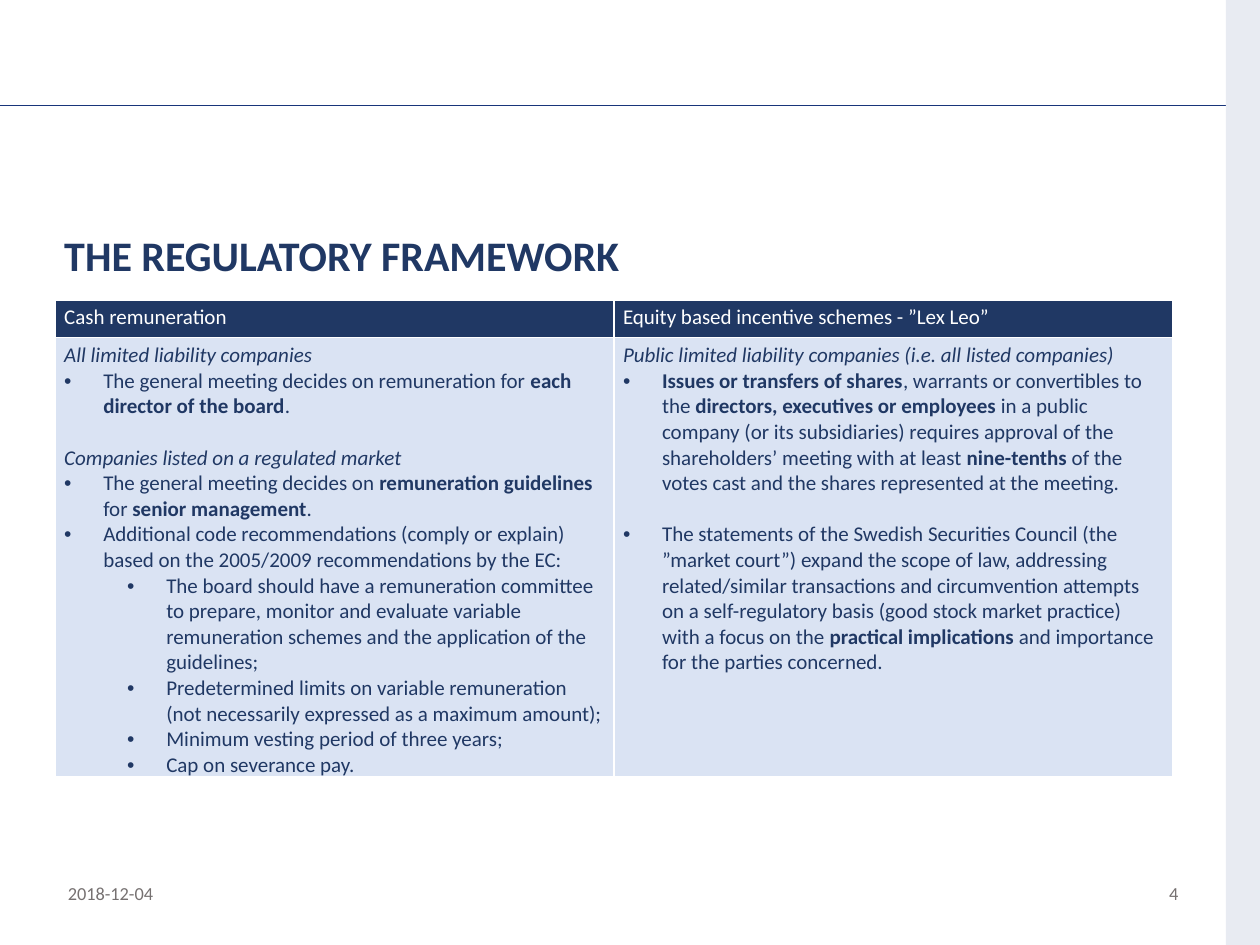
"""Build the slide on the regulatory framework for remuneration."""
from dataclasses import dataclass

from lxml import etree
from pptx import Presentation, util as u
from pptx.dml.color import RGBColor
from pptx.enum import shapes, text
from pptx.oxml import ns

NAVY = RGBColor(0x20, 0x38, 0x64)
RULE_BLUE = RGBColor(0x18, 0x35, 0x7A)
PALE_BLUE = RGBColor(0xDA, 0xE3, 0xF3)
SIDE_BLUE = RGBColor(0xE8, 0xEB, 0xF2)
GREY = RGBColor(0x76, 0x71, 0x71)
WHITE = RGBColor(0xFF, 0xFF, 0xFF)
FONT = "Calibri"
BLANK_LINE = u.Pt(14.65)
BULLET_INDENT = u.Inches(0.31)
LEVEL_STEP = u.Inches(0.5)


@dataclass(frozen=True)
class Span:
    text: str
    bold: bool = False
    italic: bool = False


@dataclass(frozen=True)
class Line:
    spans: tuple[Span, ...]
    bullet_level: int | None = None
    gap_before: bool = False


@dataclass(frozen=True)
class Label:
    text: str
    left: float
    top: float
    width: float
    height: float
    size: float
    color: RGBColor
    bold: bool = False


def heading(words: str, gap_before: bool = False) -> Line:
    return Line((Span(words, italic=True),), gap_before=gap_before)


def bullet(*words: str, level: int = 0, gap_before: bool = False) -> Line:
    spans = tuple(Span(word, bold=index % 2 == 1) for index, word in enumerate(words) if word)
    return Line(spans, level, gap_before)


LABELS = (
    Label("THE REGULATORY FRAMEWORK", 0.44, 1.78, 8.87, 0.53, 24, NAVY, True),
    Label("4", 9.18, 6.95, 0.38, 0.4, 10.5, GREY),
    Label("2018-12-04", 0.44, 6.95, 2.25, 0.4, 10.5, GREY),
)
HEADERS = ("Cash remuneration", "Equity based incentive schemes - ”Lex Leo”")
CASH_RULES = (
    heading("All limited liability companies"),
    bullet("The general meeting decides on remuneration for ", "each director of the board", "."),
    heading("Companies listed on a regulated market", gap_before=True),
    bullet("The general meeting decides on ", "remuneration guidelines", " for ",
           "senior management", "."),
    bullet("Additional code recommendations (comply or explain) based on the 2005/2009 "
           "recommendations by the EC:"),
    bullet("The board should have a remuneration committee to prepare, monitor and evaluate "
           "variable remuneration schemes and the application of the guidelines;", level=1),
    bullet("Predetermined limits on variable remuneration (not necessarily expressed as a "
           "maximum amount);", level=1),
    bullet("Minimum vesting period of three years;", level=1),
    bullet("Cap on severance pay.", level=1),
)
EQUITY_RULES = (
    heading("Public limited liability companies (i.e. all listed companies)"),
    bullet("", "Issues or transfers of shares", ", warrants or convertibles to the ",
           "directors, executives or employees",
           " in a public company (or its subsidiaries) requires approval of the shareholders’ "
           "meeting with at least ", "nine-tenths",
           " of the votes cast and the shares represented at the meeting."),
    bullet("The statements of the Swedish Securities Council (the ”market court”) expand the "
           "scope of law, addressing related/similar transactions and circumvention attempts on "
           "a self-regulatory basis (good stock market practice) with a focus on the ",
           "practical implications ", "and importance for the parties concerned.",
           gap_before=True),
)


def add_span(paragraph, span: Span, size: float, color: RGBColor) -> None:
    run = paragraph.add_run()
    run.text = span.text
    run.font.name = FONT
    run.font.size = u.Pt(size)
    run.font.bold = span.bold
    run.font.italic = span.italic
    run.font.color.rgb = color


def set_bullet(paragraph, level: int) -> None:
    properties = paragraph._p.get_or_add_pPr()
    properties.set("marL", str(BULLET_INDENT + level * LEVEL_STEP))
    properties.set("indent", str(-BULLET_INDENT))
    etree.SubElement(properties, ns.qn("a:buFont")).set("typeface", "Arial")
    etree.SubElement(properties, ns.qn("a:buChar")).set("char", "•")
    paragraph.level = level


def set_margins(target) -> None:
    target.margin_left = target.margin_right = u.Inches(0.07)
    target.margin_top = target.margin_bottom = u.Inches(0.04)


def set_borders(cell) -> None:
    properties = cell._tc.get_or_add_tcPr()
    for index, side in enumerate(("lnL", "lnR", "lnT", "lnB")):
        border = etree.Element(ns.qn(f"a:{side}"), w=str(u.Pt(1)))
        fill = etree.SubElement(border, ns.qn("a:solidFill"))
        etree.SubElement(fill, ns.qn("a:srgbClr")).set("val", str(WHITE))
        properties.insert(index, border)


def fill_cell(cell, lines: tuple[Line, ...], background: RGBColor, color: RGBColor) -> None:
    cell.fill.solid()
    cell.fill.fore_color.rgb = background
    set_margins(cell)
    set_borders(cell)
    for index, line in enumerate(lines):
        paragraph = cell.text_frame.add_paragraph() if index else cell.text_frame.paragraphs[0]
        if line.bullet_level is not None:
            set_bullet(paragraph, line.bullet_level)
        if line.gap_before:
            paragraph.space_before = BLANK_LINE
        for span in line.spans:
            add_span(paragraph, span, 12, color)


def add_label(slide, label: Label):
    box = slide.shapes.add_textbox(*map(u.Inches, (label.left, label.top, label.width, label.height)))
    box.text_frame.word_wrap = True
    add_span(box.text_frame.paragraphs[0], Span(label.text, label.bold), label.size, label.color)
    return box.text_frame


def add_frame(slide) -> None:
    rule = slide.shapes.add_connector(
        shapes.MSO_CONNECTOR.STRAIGHT, 0, u.Inches(0.84), u.Inches(10), u.Inches(0.84))
    rule.line.color.rgb = RULE_BLUE
    rule.line.width = u.Pt(0.75)
    etree.SubElement(rule._element.spPr, ns.qn("a:effectLst"))
    band = slide.shapes.add_shape(
        shapes.MSO_SHAPE.RECTANGLE, u.Inches(9.73), 0, u.Inches(0.27), u.Inches(7.5))
    band.shadow.inherit = False
    band.fill.solid()
    band.fill.fore_color.rgb = SIDE_BLUE
    band.line.fill.background()


def add_rules_table(slide) -> None:
    table = slide.shapes.add_table(
        2, 2, u.Inches(0.44), u.Inches(2.38), u.Inches(8.87), u.Inches(3.57)).table
    table.rows[0].height = u.Inches(0.3)
    table.rows[1].height = u.Inches(3.27)
    for column, (header, rules) in enumerate(zip(HEADERS, (CASH_RULES, EQUITY_RULES))):
        fill_cell(table.cell(0, column), (Line((Span(header),)),), NAVY, WHITE)
        fill_cell(table.cell(1, column), rules, PALE_BLUE, NAVY)


def main() -> None:
    presentation = Presentation()
    presentation.slide_width = u.Inches(10)
    presentation.slide_height = u.Inches(7.5)
    slide = presentation.slides.add_slide(presentation.slide_layouts[6])
    add_frame(slide)
    title, *_ = [add_label(slide, label) for label in LABELS]
    set_margins(title)
    title.vertical_anchor = text.MSO_ANCHOR.MIDDLE
    title.paragraphs[0].line_spacing = 0.9
    add_rules_table(slide)
    presentation.save("out.pptx")


if __name__ == "__main__":
    main()
